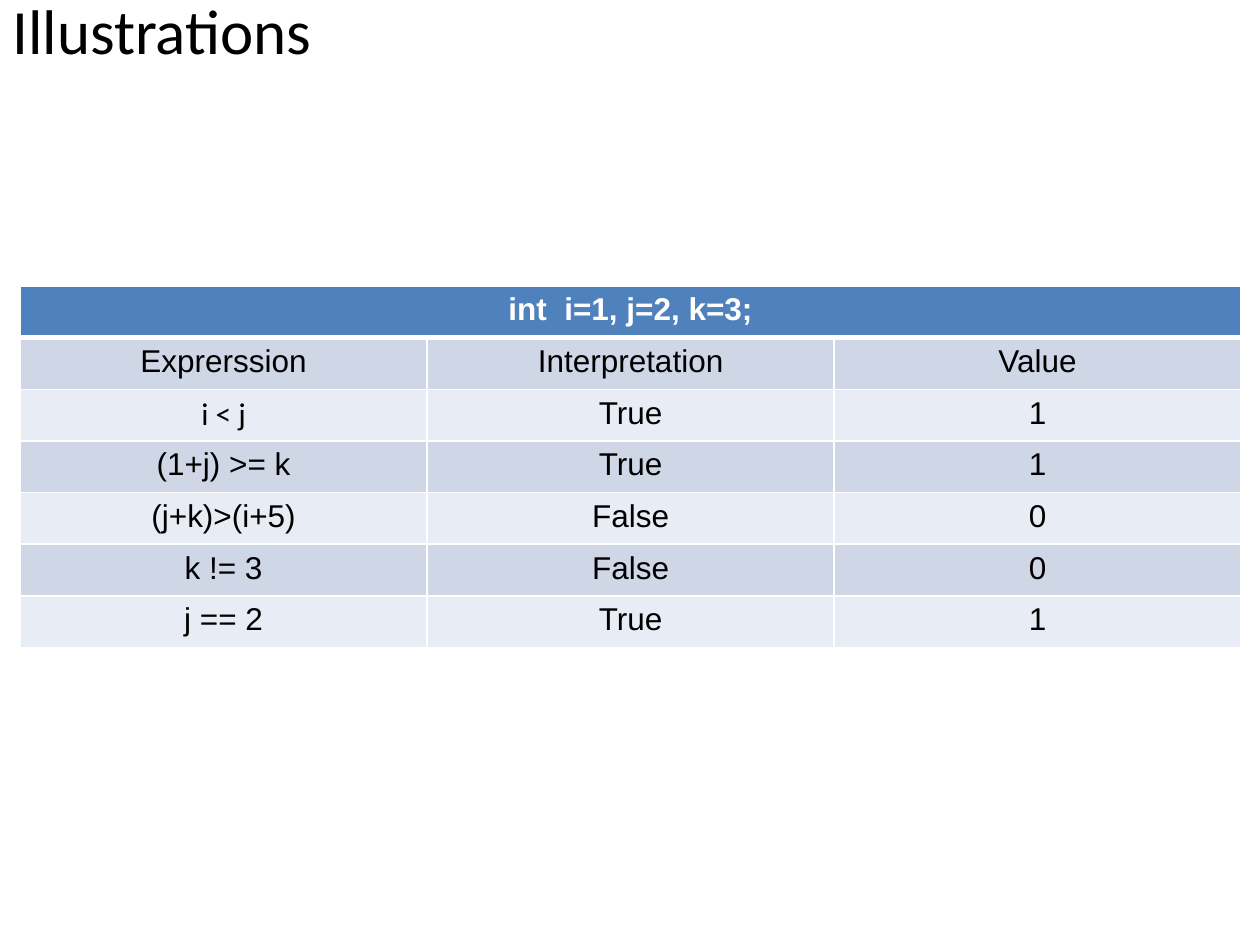
from dataclasses import dataclass

from lxml import etree
from pptx import Presentation
from pptx.dml.color import RGBColor
from pptx.enum.text import MSO_ANCHOR, MSO_AUTO_SIZE, PP_ALIGN
from pptx.oxml.ns import qn
from pptx.util import Inches, Pt

CENTER, LEFT = PP_ALIGN.CENTER, PP_ALIGN.LEFT
MIDDLE = MSO_ANCHOR.MIDDLE
NO_FIT = MSO_AUTO_SIZE.NONE
TITLE_ONLY = 5

COLORS = {
    "header": "4F81BD",
    "dark band": "CFD7E7",
    "light band": "E8ECF4",
    "white": "FFFFFF",
    "black": "000000",
}

# Table grid, in inches
LEFT_EDGE, TOP_EDGE = 0.16, 2.27
COL_W, ROW_H = 3.23, 0.41


@dataclass
class Example:
    expression: str
    interpretation: str
    value: str
    font: str = "Arial"


HEADING = "int  i=1, j=2, k=3;"
EXAMPLES = [
    Example("Exprerssion", "Interpretation", "Value"),
    Example("i < j", "True", "1", font="Calibri"),
    Example("(1+j) >= k", "True", "1"),
    Example("(j+k)>(i+5)", "False", "0"),
    Example("k != 3", "False", "0"),
    Example("j == 2", "True", "1"),
]


def rgb(name: str) -> RGBColor:
    return RGBColor.from_string(COLORS[name])


def write(tf, text: str, size: float, font: str, color: str, align, bold: bool = False) -> None:
    tf.text = text
    p = tf.paragraphs[0]
    p.alignment = align
    r = p.runs[0]
    r.font.size, r.font.name, r.font.bold = Pt(size), font, bold
    r.font.color.rgb = rgb(color)


def format_cell(cell, fill: str, bottom: float = 1, top: float = 1) -> None:
    """Draw white borders of the given point widths, then fill the cell."""
    tc_pr = cell._tc.get_or_add_tcPr()
    for side, width in (("L", 1), ("R", 1), ("T", top), ("B", bottom)):
        ln = etree.SubElement(tc_pr, qn(f"a:ln{side}"), w=str(Pt(width)))
        solid = etree.SubElement(ln, qn("a:solidFill"))
        etree.SubElement(solid, qn("a:srgbClr"), val=COLORS["white"])
    cell.fill.solid()
    cell.fill.fore_color.rgb = rgb(fill)


def add_title(slide, text: str) -> None:
    sp = slide.shapes.title
    sp.left, sp.top, sp.width, sp.height = 0, 0, Inches(9), Inches(0.47)
    tf = sp.text_frame
    tf.word_wrap, tf.auto_size, tf.vertical_anchor = True, NO_FIT, MIDDLE
    write(tf, text, 36, "Calibri", "black", LEFT)


def add_examples(slide, heading: str, examples: list[Example]) -> None:
    rows = len(examples) + 1
    table = slide.shapes.add_table(
        rows, 3, Inches(LEFT_EDGE), Inches(TOP_EDGE),
        Inches(3 * COL_W), Inches(rows * ROW_H)).table
    for col in table.columns:
        col.width = Inches(COL_W)
    for row in table.rows:
        row.height = Inches(ROW_H)

    # Heading across all columns
    for cell in table.rows[0].cells:
        format_cell(cell, "header", bottom=3)
    table.cell(0, 0).merge(table.cell(0, 2))
    write(table.cell(0, 0).text_frame, heading, 18, "Arial", "white", CENTER, bold=True)

    # Banded rows
    for i, ex in enumerate(examples, 1):
        texts = (ex.expression, ex.interpretation, ex.value)
        fonts = (ex.font, "Arial", "Arial")
        for cell, text, font in zip(table.rows[i].cells, texts, fonts):
            format_cell(cell, "dark band" if i % 2 else "light band", top=3 if i == 1 else 1)
            write(cell.text_frame, text, 18, font, "black", CENTER)


def main() -> None:
    prs = Presentation()
    prs.slide_width, prs.slide_height = Inches(10), Inches(7.5)
    slide = prs.slides.add_slide(prs.slide_layouts[TITLE_ONLY])
    add_title(slide, "Illustrations")
    add_examples(slide, HEADING, EXAMPLES)
    prs.save("out.pptx")


if __name__ == "__main__":
    main()
